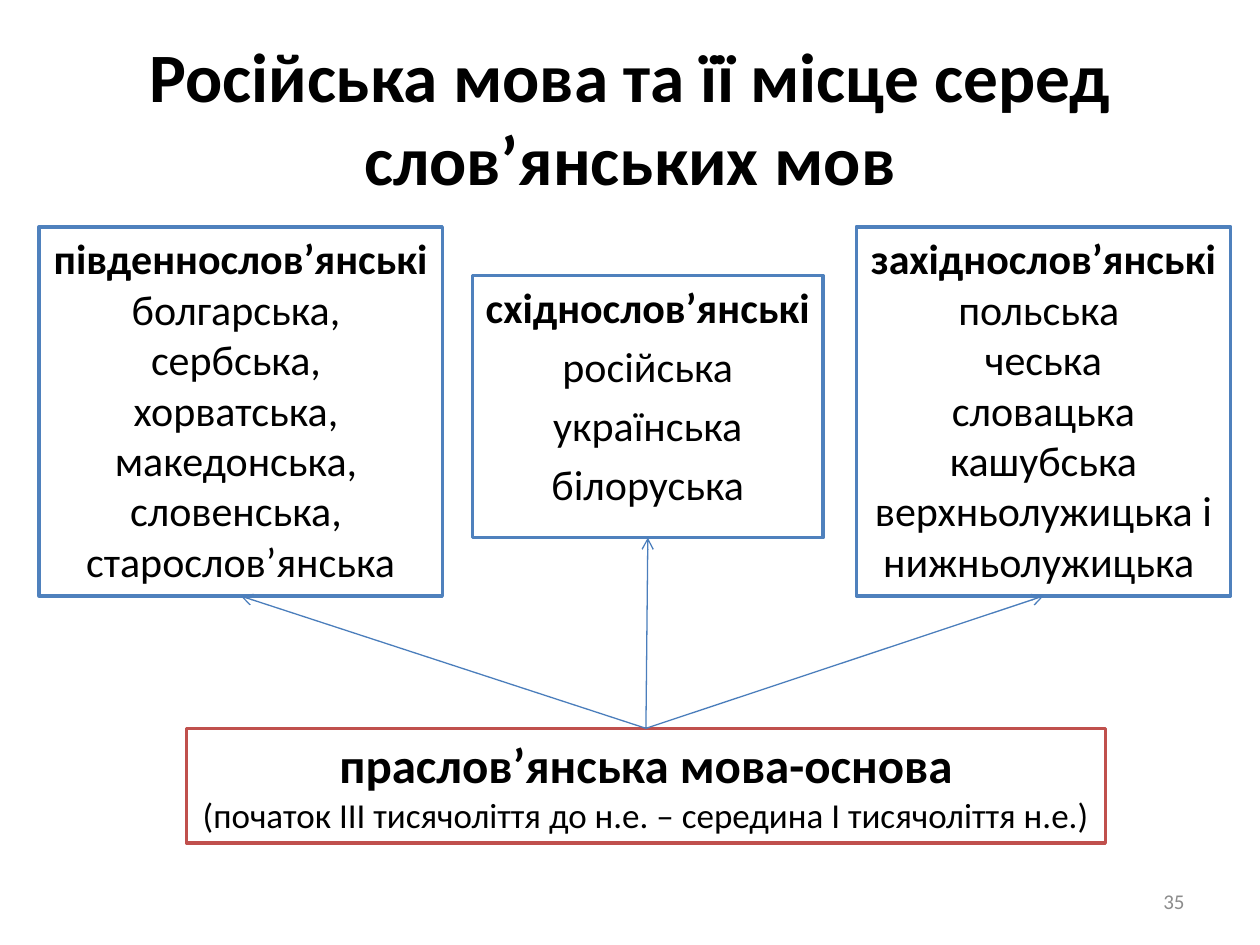
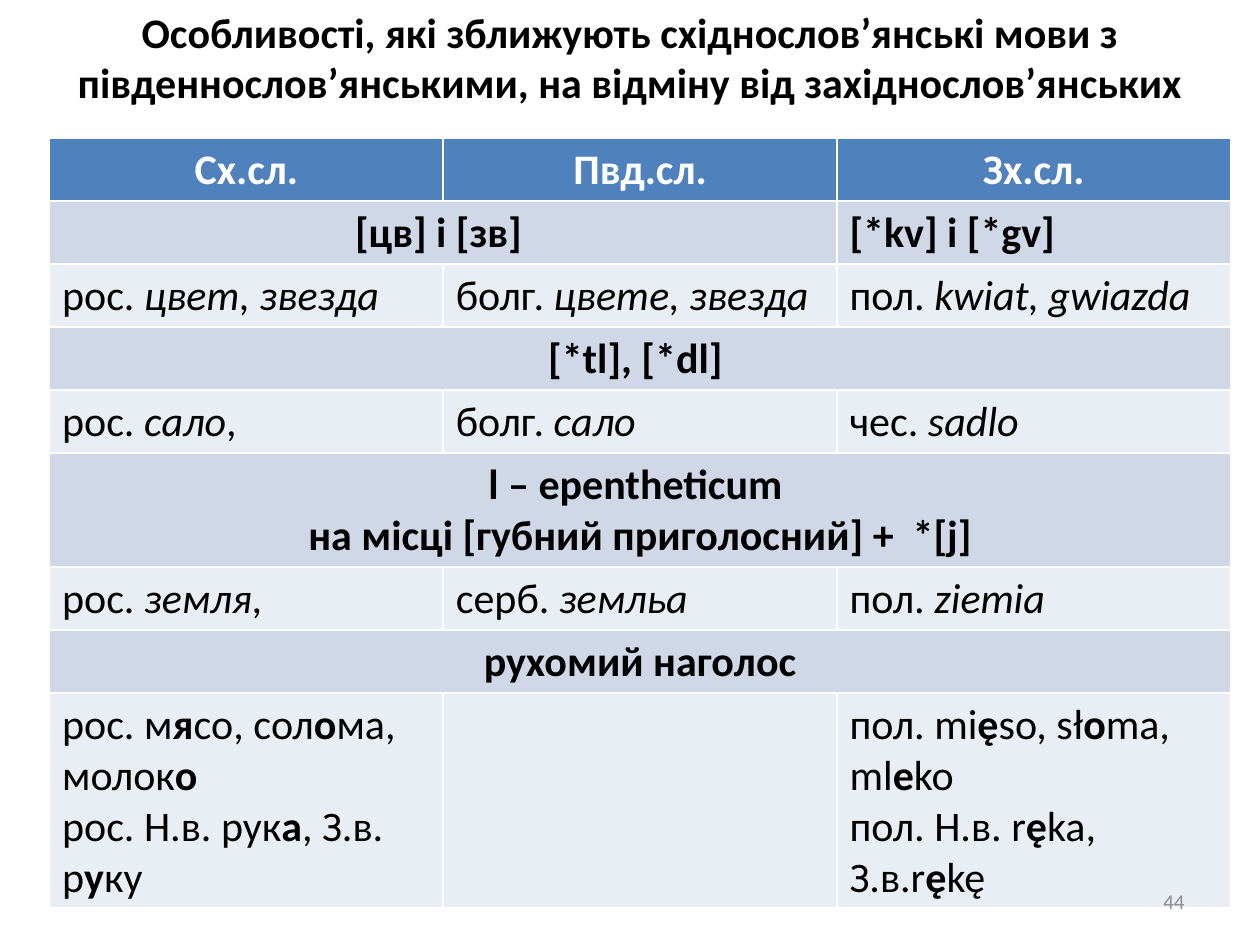
from lxml.etree import SubElement
from pptx import Presentation
from pptx.dml.color import RGBColor
from pptx.enum.shapes import MSO_CONNECTOR as Connector, MSO_SHAPE as Shape
from pptx.enum.text import MSO_ANCHOR as Anchor, PP_ALIGN as Align
from pptx.oxml.ns import qn
from pptx.util import Pt

FONT = "Calibri"
BLACK, WHITE, GREY = "000000", "FFFFFF", "8C8C8C"
BLUE, RED, ARROW_BLUE = "4F81BD", "C0504D", "4B7EBC"
DARK_BAND, LIGHT_BAND = "D0D8E8", "E9EDF4"
BOLD, ITALIC = {"bold": True}, {"italic": True}


def rgb(value):
    return RGBColor.from_string(value)


class Deck:
    def __init__(self):
        self.presentation = Presentation()
        self.presentation.slide_width, self.presentation.slide_height = Pt(720), Pt(540)
        self.slide = None

    def add_slide(self, number):
        layout = self.presentation.slide_layouts[6]
        self.slide = self.presentation.slides.add_slide(layout)
        self.number = number

    def add_page_number(self):
        self.add_text((516, 500.5, 168, 28.75), [str(self.number)], Align.RIGHT,
                      Anchor.MIDDLE, size=12, color=GREY)

    def fill_frame(self, frame, lines, align=Align.CENTER, accent=BOLD, gap=0, color=BLACK,
                   **style):
        """Set one paragraph a line; parts between bars take the accent.

        A line may also be a pair of text and its own format values.
        """
        for index, line in enumerate(lines):
            text, own = (line, {}) if isinstance(line, str) else line
            paragraph = frame.paragraphs[0] if index == 0 else frame.add_paragraph()
            paragraph.alignment = align
            if index and gap:
                paragraph.space_before = Pt(gap)
            for part, piece in enumerate(text.split("|")):
                if not piece:
                    continue
                run = paragraph.add_run()
                run.text = piece
                run.font.color.rgb = rgb(color)
                values = {"name": FONT, "bold": False, **style, **own}
                if part % 2:
                    values.update(accent)
                values["size"] = Pt(values["size"])
                for name, value in values.items():
                    setattr(run.font, name, value)

    def add_text(self, box, lines, align=Align.CENTER, anchor=Anchor.TOP, **style):
        frame = self.slide.shapes.add_textbox(*map(Pt, box)).text_frame
        frame.word_wrap = True
        frame.vertical_anchor = anchor
        self.fill_frame(frame, lines, align, **style)

    def add_box(self, box, lines, outline=BLUE, wrap=True, **style):
        shape = self.slide.shapes.add_shape(Shape.RECTANGLE, *map(Pt, box))
        shape.shadow.inherit = False
        shape.fill.solid()
        shape.fill.fore_color.rgb = rgb(WHITE)
        shape.line.color.rgb = rgb(outline)
        shape.line.width = Pt(2)
        shape.text_frame.word_wrap = wrap
        shape.text_frame.vertical_anchor = Anchor.TOP
        self.fill_frame(shape.text_frame, lines, **style)
        return shape

    def add_arrow(self, source, target):
        """Join the top of source to the bottom of target."""
        arrow = self.slide.shapes.add_connector(Connector.STRAIGHT, 0, 0, 0, 0)
        arrow.begin_connect(source, 0)
        arrow.end_connect(target, 2)
        arrow.line.color.rgb = rgb(ARROW_BLUE)
        arrow.line.width = Pt(0.75)
        properties = arrow._element.spPr
        SubElement(properties.find(qn("a:ln")), qn("a:tailEnd"), type="arrow")
        SubElement(properties, qn("a:effectLst"))

    def add_table(self, box, rows, heights):
        """Fill a table from rows of cells; None joins a cell to the one on its left."""
        columns = len(rows[0])
        table = self.slide.shapes.add_table(len(rows), columns, *map(Pt, box)).table
        for row_index, (cells, height) in enumerate(zip(rows, heights)):
            table.rows[row_index].height = Pt(height)
            heading = row_index % 2 == 1
            band = DARK_BAND if heading else LIGHT_BAND
            for column, lines in enumerate(cells):
                cell = table.cell(row_index, column)
                cell.fill.solid()
                cell.fill.fore_color.rgb = rgb(band if row_index else BLUE)
                if lines is None:
                    continue
                span = 1
                while column + span < columns and cells[column + span] is None:
                    span += 1
                if span > 1:
                    cell.merge(table.cell(row_index, column + span - 1))
                centred = row_index == 0 or span > 1
                self.fill_frame(cell.text_frame, lines, Align.CENTER if centred else Align.LEFT,
                                accent=BOLD if row_index == len(rows) - 1 else ITALIC,
                                color=BLACK if row_index else WHITE,
                                size=24, bold=heading or row_index == 0)


def add_language_tree(deck):
    deck.add_slide(35)
    deck.add_text((36, 21.6, 648, 90), ["Російська мова та її місце серед слов’янських мов"],
                  anchor=Anchor.MIDDLE, size=39.6, bold=True)
    east = ["східнослов’янські ", "російська", "українська", "білоруська"]
    south = ["південнослов’янські ", "болгарська, ", "сербська, ", "хорватська, ",
             "македонська, ", "словенська, ", "старослов’янська"]
    west = ["західнослов’янські ", "польська ", "чеська", "словацька", "кашубська",
            "верхньолужицька і нижньолужицька "]
    groups = [((270, 157.5, 200.4, 149.75), east, 4.8),
              ((22.4, 129.6, 230.4, 211), south, 0),
              ((489.4, 129.6, 213.8, 211), west, 0)]
    branches = [deck.add_box(box, [(name, BOLD), *languages], gap=gap, size=24)
                for box, (name, *languages), gap in groups]
    root = deck.add_box((106.6, 416.2, 525, 65.5),
                        [("праслов’янська мова-основа", {"size": 28, **BOLD}),
                         "(початок ІІІ тисячоліття до н.е. – середина І тисячоліття н.е.)"],
                        outline=RED, wrap=False, size=20)
    for branch in branches:
        deck.add_arrow(root, branch)
    deck.add_page_number()


def add_feature_table(deck):
    deck.add_slide(44)
    deck.add_text((33.8, 0, 652.4, 65.5),
                  ["Особливості, які зближують східнослов’янські мови з південнослов’янськими, "
                   "на відміну від західнослов’янських"], size=24, bold=True)
    rows = [
        [["Сх.сл."], ["Пвд.сл."], ["Зх.сл."]],
        [["[цв] і [зв] "], None, ["[*kv] і [*gv]"]],
        [["рос. |цвет, звезда|"], ["болг. |цвете, звезда|"], ["пол. |kwiat, gwiazda|"]],
        [["[*tl], [*dl] "], None, None],
        [["рос. |сало|,"], ["болг. |сало|"], ["чес. |sadlo|"]],
        [["l – epentheticum ", "на місці [губний приголосний] +  *[j]"], None, None],
        [["рос. |земля|,"], ["серб. |земльа|"], ["пол. |ziemia|"]],
        [["рухомий наголос"], None, None],
        [["рос. м|я|со, сол|о|ма, молок|о|", "рос. Н.в. рук|а|, З.в. р|у|ку"], [],
         ["пол. mi|ę|so, sł|o|ma, ml|e|ko", "пол. Н.в. r|ę|ka, З.в.r|ę|kę"]],
    ]
    heights = [36] * 5 + [65, 36, 36, 122]
    deck.add_table((28.3, 78.8, 675, sum(heights)), rows, heights)
    deck.add_page_number()


def main():
    deck = Deck()
    add_language_tree(deck)
    add_feature_table(deck)
    deck.presentation.save("out.pptx")


if __name__ == "__main__":
    main()
